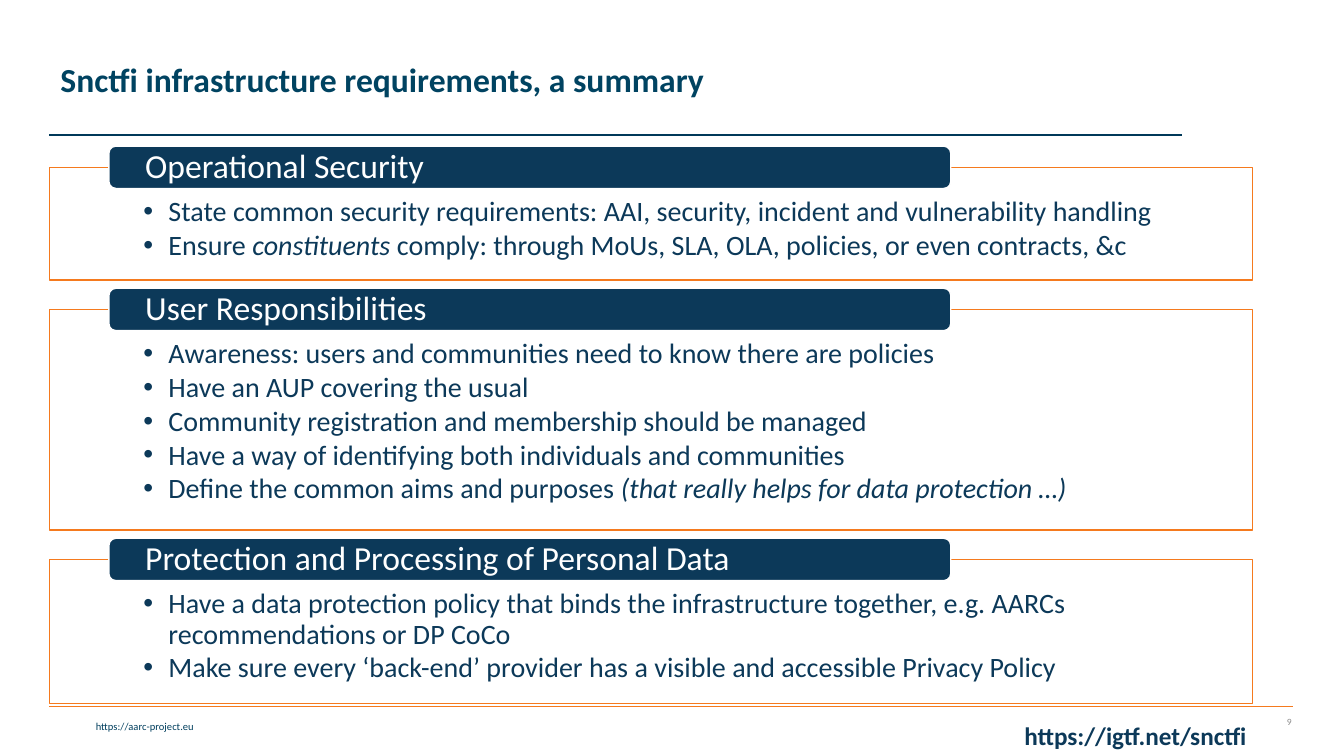
from dataclasses import dataclass

from lxml import etree
from pptx import Presentation, util as u
from pptx.dml.color import RGBColor
from pptx.enum import shapes, text
from pptx.oxml.ns import qn

SLIDE_WIDTH, SLIDE_HEIGHT = u.Inches(13.33), u.Inches(7.5)
NAVY = RGBColor(0x0C, 0x39, 0x59)
TITLE_BLUE = RGBColor(0x00, 0x43, 0x61)
RULE_BLUE = RGBColor(0x00, 0x39, 0x59)
LINK_BLUE = RGBColor(0x00, 0x3F, 0x5E)
ORANGE = RGBColor(0xF5, 0x7A, 0x1E)
GREY = RGBColor(0x8C, 0x8C, 0x8C)
WHITE = RGBColor(0xFF, 0xFF, 0xFF)

# All lengths are percentages of the slide's width or height.
MARGIN, PANEL_WIDTH = 3.68, 89.5
FIRST_PANEL_TOP, PANEL_GAP = 22.13, 3.87
TAB_LEFT, TAB_WIDTH, TAB_HEIGHT = 8.1, 62.64, 5.6


@dataclass(frozen=True)
class Run:
    text: str
    italic: bool = False


@dataclass(frozen=True)
class Panel:
    heading: str
    height: float
    bullets: list[list[Run]]


@dataclass(frozen=True)
class Box:
    left: float
    top: float
    width: float
    height: float

    def emu(self) -> tuple[int, int, int, int]:
        return across(self.left), down(self.top), across(self.width), down(self.height)


PANELS = [
    Panel("Operational Security", 14.93, [
        [Run("State common security requirements: AAI, security, incident and vulnerability handling")],
        [Run("Ensure "), Run("constituents ", True),
         Run("comply: through MoUs, SLA, OLA, policies, or even contracts, &c")],
    ]),
    Panel("User Responsibilities", 29.2, [
        [Run("Awareness: users and communities need to know there are policies")],
        [Run("Have an AUP covering the usual")],
        [Run("Community registration and membership should be managed")],
        [Run("Have a way of identifying both individuals and communities")],
        [Run("Define the common aims and purposes "),
         Run("(that really helps for data protection …)", True)],
    ]),
    Panel("Protection and Processing of Personal Data", 19.07, [
        [Run("Have a data protection policy that binds the infrastructure together, "
             "e.g. AARCs recommendations or DP CoCo")],
        [Run("Make sure every ‘back-end’ provider has a visible and accessible Privacy Policy")],
    ]),
]


def across(percent: float) -> int:
    return round(SLIDE_WIDTH * percent / 100)


def down(percent: float) -> int:
    return round(SLIDE_HEIGHT * percent / 100)


def write(shape, paragraphs: list[list[Run]], *, size: float, color: RGBColor,
          bold: bool = False, bulleted: bool = False, wrap: bool = True,
          align=text.PP_ALIGN.LEFT, anchor=text.MSO_ANCHOR.TOP,
          line_spacing: float = 1.0, space_after: float = 0, insets=None) -> None:
    """Fill a shape with formatted runs; insets are side, top and bottom percentages."""
    frame = shape.text_frame
    frame.word_wrap = wrap
    frame.auto_size = text.MSO_AUTO_SIZE.NONE
    frame.vertical_anchor = anchor
    if insets:
        side, top, bottom = insets
        frame.margin_left = frame.margin_right = across(side)
        frame.margin_top, frame.margin_bottom = down(top), down(bottom)
    for index, runs in enumerate(paragraphs):
        paragraph = frame.add_paragraph() if index else frame.paragraphs[0]
        paragraph.alignment = align
        paragraph.line_spacing = line_spacing
        paragraph.space_after = u.Pt(space_after)
        if bulleted:
            add_bullet(paragraph)
        for part in runs:
            run = paragraph.add_run()
            run.text = part.text
            font = run.font
            font.name, font.size, font.bold = "Calibri", u.Pt(size), bold
            font.italic = part.italic
            font.color.rgb = color


def add_bullet(paragraph) -> None:
    properties = paragraph._p.get_or_add_pPr()
    properties.set("marL", str(u.Inches(0.25)))
    properties.set("indent", str(-u.Inches(0.25)))
    etree.SubElement(properties, qn("a:buFont")).set("typeface", "Arial")
    etree.SubElement(properties, qn("a:buChar")).set("char", "•")


def add_rule(slide, top: float, right: float, color: RGBColor) -> None:
    rule = slide.shapes.add_connector(shapes.MSO_CONNECTOR.STRAIGHT, across(MARGIN),
                                      down(top), across(right), down(top))
    rule.line.color.rgb, rule.line.width = color, u.Pt(1)
    etree.SubElement(rule._element.spPr, qn("a:effectLst"))


def add_box(slide, kind, box: Box, fill: RGBColor, line: RGBColor):
    shape = slide.shapes.add_shape(kind, *box.emu())
    shape.shadow.inherit = False
    shape.fill.solid()
    shape.fill.fore_color.rgb = fill
    shape.line.color.rgb, shape.line.width = line, u.Pt(1)
    return shape


def add_label(slide, box: Box, words: str, **text_format) -> None:
    write(slide.shapes.add_textbox(*box.emu()), [[Run(words)]], **text_format)


def add_panel(slide, panel: Panel, top: float) -> None:
    """Draw a bulleted frame with its heading tab centred on the upper edge."""
    frame = add_box(slide, shapes.MSO_SHAPE.RECTANGLE,
                    Box(MARGIN, top, PANEL_WIDTH, panel.height), WHITE, ORANGE)
    fill_color = frame._element.spPr.find(qn("a:solidFill"))[0]
    etree.SubElement(fill_color, qn("a:alpha")).set("val", "90000")
    write(frame, panel.bullets, size=20, color=NAVY, bulleted=True,
          line_spacing=0.9, space_after=2.5, insets=(6.98, 4, 2.13))
    tab = add_box(slide, shapes.MSO_SHAPE.ROUNDED_RECTANGLE,
                  Box(TAB_LEFT, top - TAB_HEIGHT / 2, TAB_WIDTH, TAB_HEIGHT), NAVY, WHITE)
    write(tab, [[Run(panel.heading)]], size=24, color=WHITE, line_spacing=0.9,
          anchor=text.MSO_ANCHOR.MIDDLE, insets=(2.55, 0, 0))


def main() -> None:
    presentation = Presentation()
    presentation.slide_width, presentation.slide_height = SLIDE_WIDTH, SLIDE_HEIGHT
    slide = presentation.slides.add_slide(presentation.slide_layouts.get_by_name("Title Only"))

    add_rule(slide, 93.47, 96.17, ORANGE)
    add_label(slide, Box(0.23, 94.53, 14.93, 3.07), "https://aarc-project.eu",
              size=7.5, color=LINK_BLUE, align=text.PP_ALIGN.RIGHT)
    add_rule(slide, 17.87, 87.92, RULE_BLUE)
    add_label(slide, Box(90.77, 93.47, 6.08, 4), "9", size=6.8, color=GREY,
              align=text.PP_ALIGN.RIGHT, anchor=text.MSO_ANCHOR.MIDDLE)

    title = slide.shapes.title
    title.left, title.top, title.width, title.height = Box(3.75, 1.07, 78.85, 19.33).emu()
    write(title, [[Run("Snctfi infrastructure requirements, a summary")]], size=24,
          color=TITLE_BLUE, bold=True, anchor=text.MSO_ANCHOR.MIDDLE, line_spacing=0.9)

    top = FIRST_PANEL_TOP
    for panel in PANELS:
        add_panel(slide, panel, top)
        top += panel.height + PANEL_GAP

    add_label(slide, Box(75.47, 94.67, 18.38, 5.33), "https://igtf.net/snctfi",
              size=18, color=NAVY, bold=True, wrap=False)
    presentation.save("out.pptx")


if __name__ == "__main__":
    main()
